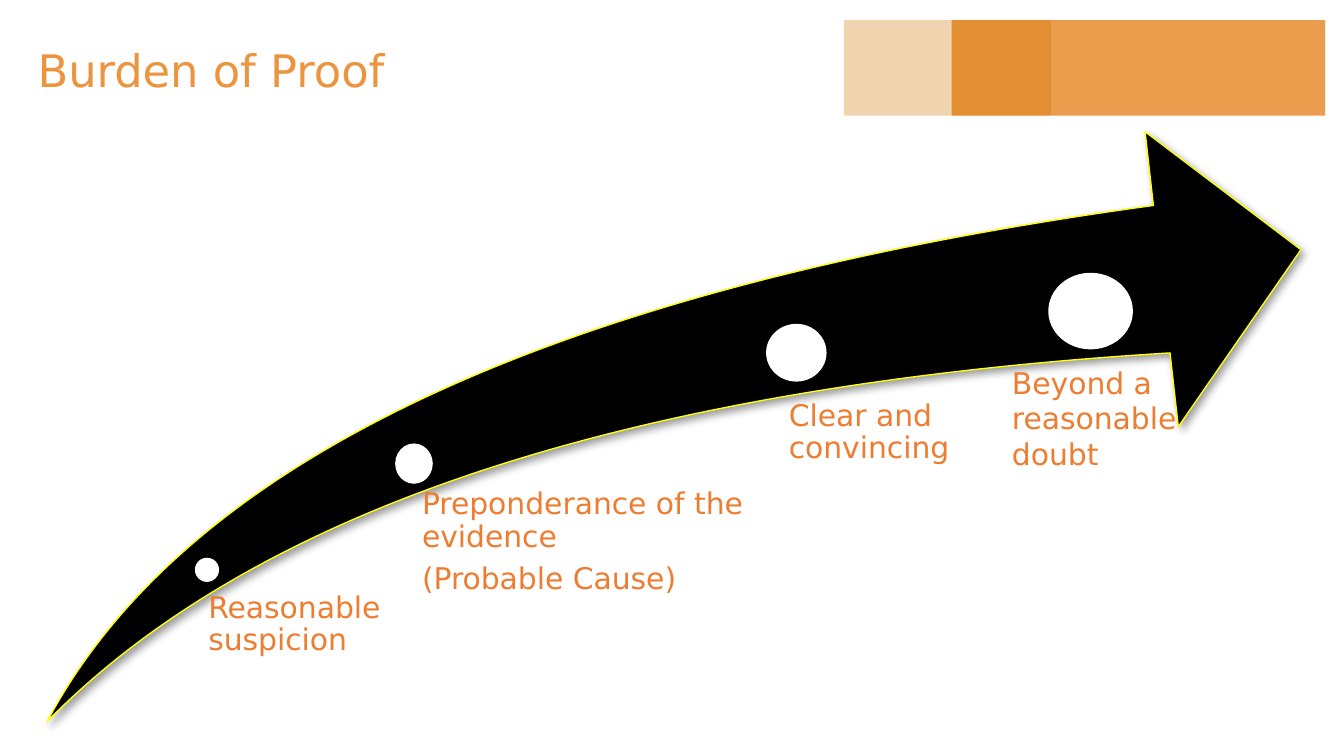
"""Build the Burden of Proof slide."""
from lxml.etree import SubElement as Sub
from pptx import Presentation
from pptx.dml.color import RGBColor as RGB
from pptx.enum.shapes import MSO_SHAPE as Kind
from pptx.enum.text import MSO_ANCHOR as Anchor, MSO_AUTO_SIZE as Fit, PP_ALIGN as Align
from pptx.oxml.ns import qn
from pptx.util import Inches, Pt

PALE = RGB(0xEB, 0x95, 0x40)
DEEP = RGB(0xD0, 0x77, 0x00)
RUST = RGB(0xED, 0x7D, 0x31)
BLACK = RGB(0, 0, 0)
WHITE = RGB(255, 255, 255)
YELLOW = RGB(255, 255, 0)


class Deck:
    font = "DejaVu Sans"

    def __init__(self, prs):
        self.slide = prs.slides.add_slide(prs.slide_layouts[5])
        self.shapes = self.slide.shapes

    def shape(self, kind, box, color):
        item = self.shapes.add_shape(kind, *map(Inches, box))
        item.shadow.inherit = False
        item.fill.solid()
        item.fill.fore_color.rgb = color
        item.line.fill.background()
        return item

    def bar(self, box, color, alpha):
        props = self.shape(Kind.RECTANGLE, box, color)._element.spPr
        tint = props.find(qn("a:solidFill")).find(qn("a:srgbClr"))
        Sub(tint, qn("a:alpha"), val=str(alpha * 1000))

    def shade(self, item, alpha, blur, dist, angle):
        effect = item._element.spPr.find(qn("a:effectLst"))
        outer = Sub(effect, qn("a:outerShdw"), blurRad=str(Pt(blur)),
                    dist=str(Pt(dist)), dir=str(angle * 60000), rotWithShape="0")
        color = Sub(outer, qn("a:srgbClr"), val=str(BLACK))
        Sub(color, qn("a:alpha"), val=str(alpha * 1000))

    def arrow(self, box):
        item = self.shape(Kind.SWOOSH_ARROW, box, BLACK)
        item.adjustments[0] = item.adjustments[1] = 0.25
        item.line.color.rgb = YELLOW
        item.line.width = Pt(0.75)
        self.shade(item, 40, 4, 3, 45)

    def dot(self, box):
        self.shade(self.shape(Kind.OVAL, box, WHITE), 35, 3.1, 1.8, 90)

    def style(self, para, size, color):
        para.alignment = Align.LEFT
        para.font.name = self.font
        para.font.size = Pt(size)
        para.font.color.rgb = color

    def pad(self, frame, left, top, right, bottom):
        frame.word_wrap = True
        frame.auto_size = Fit.NONE
        frame.margin_left, frame.margin_top = Inches(left), Inches(top)
        frame.margin_right, frame.margin_bottom = Inches(right), Inches(bottom)

    def title(self, box, text):
        item = self.shapes.title
        item.left, item.top, item.width, item.height = map(Inches, box)
        frame = item.text_frame
        frame.text = text
        self.pad(frame, 0.1, 0.1, 0.1, 0.1)
        frame.vertical_anchor = Anchor.MIDDLE
        self.style(frame.paragraphs[0], 24, PALE)
        tree = self.shapes._spTree
        tree.remove(item._element)
        tree.append(item._element)

    def label(self, box, inset, text, lead, after):
        frame = self.shapes.add_textbox(*map(Inches, box)).text_frame
        frame.text = text
        self.pad(frame, inset, 0, 0, 0)
        for para in frame.paragraphs:
            para.line_spacing = lead
            para.space_after = Pt(after)
            self.style(para, 16, RUST)


def main():
    prs = Presentation()
    prs.slide_width = Inches(10)
    prs.slide_height = prs.slide_width * 9 // 16
    deck = Deck(prs)
    deck.bar((7.08, 0.15, 2.78, 0.71), PALE, 93)
    deck.bar((6.28, 0.15, 1.54, 0.71), DEEP, 31)
    deck.title((0.18, 0.05, 9, 0.94), "Burden of Proof")
    deck.arrow((0.35, 0.98, 9.33, 4.39))
    for box in (
        (1.45, 4.15, 0.18, 0.18),
        (2.94, 3.3, 0.28, 0.3),
        (5.7, 2.41, 0.45, 0.43),
        (7.8, 2.03, 0.63, 0.57),
    ):
        deck.dot(box)
    for box, inset, text, lead, after in (
        ((1.44, 4.41, 1.59, 1.05), 0.11, "Reasonable suspicion", 0.9, 5.6),
        ((2.94, 3.64, 2.72, 1.23), 0.2,
         "Preponderance of the evidence\n(Probable Cause)", 0.9, 5.6),
        ((5.61, 2.98, 2.34, 0.74), 0.26, "Clear and convincing", 0.9, 5.6),
        ((7.18, 2.71, 1.73, 0.99), 0.35, "Beyond a\nreasonable doubt", 1.0, 0),
    ):
        deck.label(box, inset, text, lead, after)
    prs.save("out.pptx")


if __name__ == "__main__":
    main()
